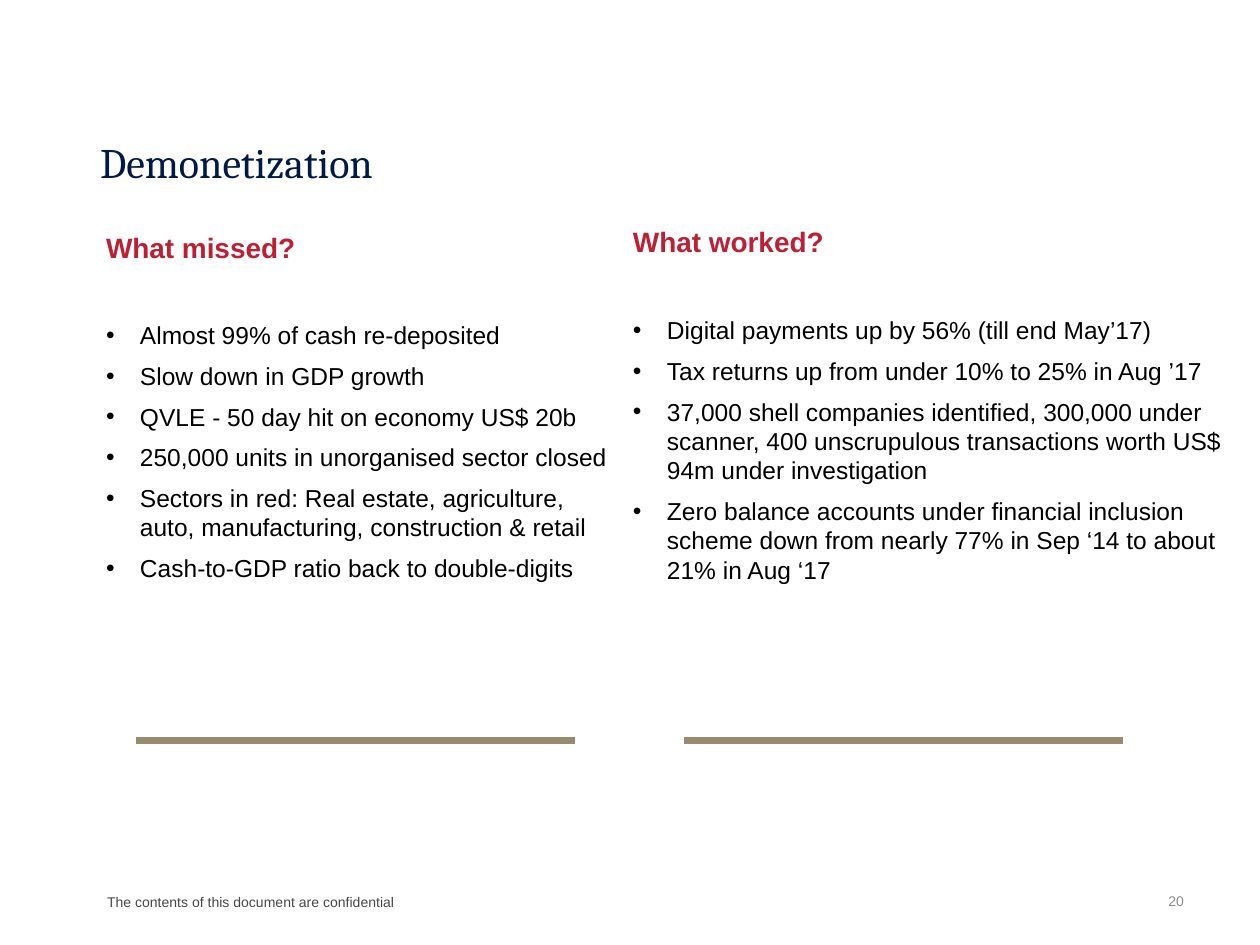
from dataclasses import dataclass

from lxml.etree import SubElement
from pptx import Presentation
from pptx.dml.color import RGBColor
from pptx.enum.shapes import MSO_CONNECTOR
from pptx.enum.text import MSO_ANCHOR, MSO_AUTO_SIZE, PP_ALIGN
from pptx.oxml.ns import qn
from pptx.shapes.base import BaseShape
from pptx.slide import Slide
from pptx.text.text import TextFrame, _Paragraph
from pptx.util import Emu, Pt

PX_PER_INCH = 126
RULE_Y = 741
RULE_WIDTH = 439
BULLET_INDENT = 34


@dataclass(frozen=True)
class TextStyle:
    size: int
    color: str
    family: str = "Arial"
    bold: bool = False


@dataclass(frozen=True)
class Theme:
    title: TextStyle = TextStyle(24, "001945", "Cambria")
    heading: TextStyle = TextStyle(16, "BB2034", bold=True)
    bullet: TextStyle = TextStyle(14, "000000")
    footer: TextStyle = TextStyle(8, "464847")
    page_number: TextStyle = TextStyle(8, "8C8C8C")
    rule: str = "968C6D"


@dataclass(frozen=True)
class Box:
    left: int
    top: int
    width: int
    height: int


@dataclass(frozen=True)
class Column:
    box: Box
    rule_left: int
    heading: str
    points: tuple[str, ...]


THEME = Theme()

COLUMNS = (
    Column(
        Box(92, 224, 536, 572), 136, "What missed?",
        (
            "Almost 99% of cash re-deposited",
            "Slow down in GDP growth",
            "QVLE - 50 day hit on economy US$ 20b",
            "250,000 units in unorganised sector closed",
            "Sectors in red: Real estate, agriculture, auto, manufacturing, construction & retail",
            "Cash-to-GDP ratio back to double-digits",
        ),
    ),
    Column(
        Box(619, 219, 627, 582), 684, "What worked?",
        (
            "Digital payments up by 56% (till end May’17)",
            "Tax returns up from under 10% to 25% in Aug ’17",
            "37,000 shell companies identified, 300,000 under scanner, "
            "400 unscrupulous transactions worth US$ 94m under investigation",
            "Zero balance accounts under financial inclusion scheme down "
            "from nearly 77% in Sep ‘14 to about 21% in Aug ‘17",
        ),
    ),
)


def px(length: int) -> Emu:
    return Emu(round(length * 914400 / PX_PER_INCH))


def place(shape: BaseShape, box: Box) -> None:
    shape.left, shape.top = px(box.left), px(box.top)
    shape.width, shape.height = px(box.width), px(box.height)


def set_frame(frame: TextFrame, anchor: MSO_ANCHOR, side: int, edge: int) -> None:
    frame.word_wrap = True
    frame.auto_size = MSO_AUTO_SIZE.NONE
    frame.vertical_anchor = anchor
    frame.margin_left = frame.margin_right = px(side)
    frame.margin_top = frame.margin_bottom = px(edge)


def style(paragraph: _Paragraph, look: TextStyle, align: PP_ALIGN = PP_ALIGN.LEFT) -> None:
    paragraph.alignment = align
    font = paragraph.font
    font.name, font.size, font.bold = look.family, Pt(look.size), look.bold
    font.color.rgb = RGBColor.from_string(look.color)


def set_bullet(paragraph: _Paragraph, indent: int, symbol: str = "") -> None:
    properties = paragraph._p.get_or_add_pPr()
    properties.set("marL", str(px(indent)))
    properties.set("indent", str(-px(indent)))
    if symbol:
        color = SubElement(properties, qn("a:buClr"))
        SubElement(color, qn("a:srgbClr"), val=THEME.bullet.color)
        SubElement(properties, qn("a:buFont"), typeface=THEME.bullet.family)
        SubElement(properties, qn("a:buChar"), char=symbol)
    else:
        SubElement(properties, qn("a:buNone"))


def draw_column(slide: Slide, body: BaseShape, column: Column) -> None:
    place(body, column.box)
    frame = body.text_frame
    set_frame(frame, MSO_ANCHOR.TOP, 14, 6)

    heading = frame.paragraphs[0]
    heading.text = column.heading
    heading.space_before, heading.space_after = Pt(0), Pt(26)
    set_bullet(heading, 0)
    style(heading, THEME.heading)

    for point in column.points:
        item = frame.add_paragraph()
        item.text = point
        item.space_before = Pt(6.4)
        set_bullet(item, BULLET_INDENT, "•")
        style(item, THEME.bullet)

    rule = slide.shapes.add_connector(
        MSO_CONNECTOR.STRAIGHT,
        px(column.rule_left), px(RULE_Y),
        px(column.rule_left + RULE_WIDTH), px(RULE_Y),
    )
    rule.line.color.rgb = RGBColor.from_string(THEME.rule)
    rule.line.width = Pt(4)
    SubElement(rule._element.spPr, qn("a:effectLst"))


def draw_label(slide: Slide, text: str, box: Box, look: TextStyle,
               align: PP_ALIGN, side: int) -> None:
    label = slide.shapes.add_textbox(0, 0, 0, 0)
    place(label, box)
    set_frame(label.text_frame, MSO_ANCHOR.MIDDLE, side, 0)
    paragraph = label.text_frame.paragraphs[0]
    paragraph.text = text
    style(paragraph, look, align)


def main() -> None:
    presentation = Presentation()
    presentation.slide_width, presentation.slide_height = px(1260), px(945)
    slide = presentation.slides.add_slide(presentation.slide_layouts[3])
    title, *bodies = slide.placeholders

    place(title, Box(87, 109, 1110, 106))
    set_frame(title.text_frame, MSO_ANCHOR.MIDDLE, 13, 6)
    title.text_frame.text = "Demonetization"
    style(title.text_frame.paragraphs[0], THEME.title)

    for body, column in zip(bodies, COLUMNS):
        draw_column(slide, body, column)

    draw_label(slide, "The contents of this document are confidential",
               Box(107, 891, 473, 22), THEME.footer, PP_ALIGN.LEFT, 0)
    draw_label(slide, "20", Box(903, 876, 294, 50),
               THEME.page_number, PP_ALIGN.RIGHT, 13)

    presentation.save("out.pptx")


if __name__ == "__main__":
    main()
